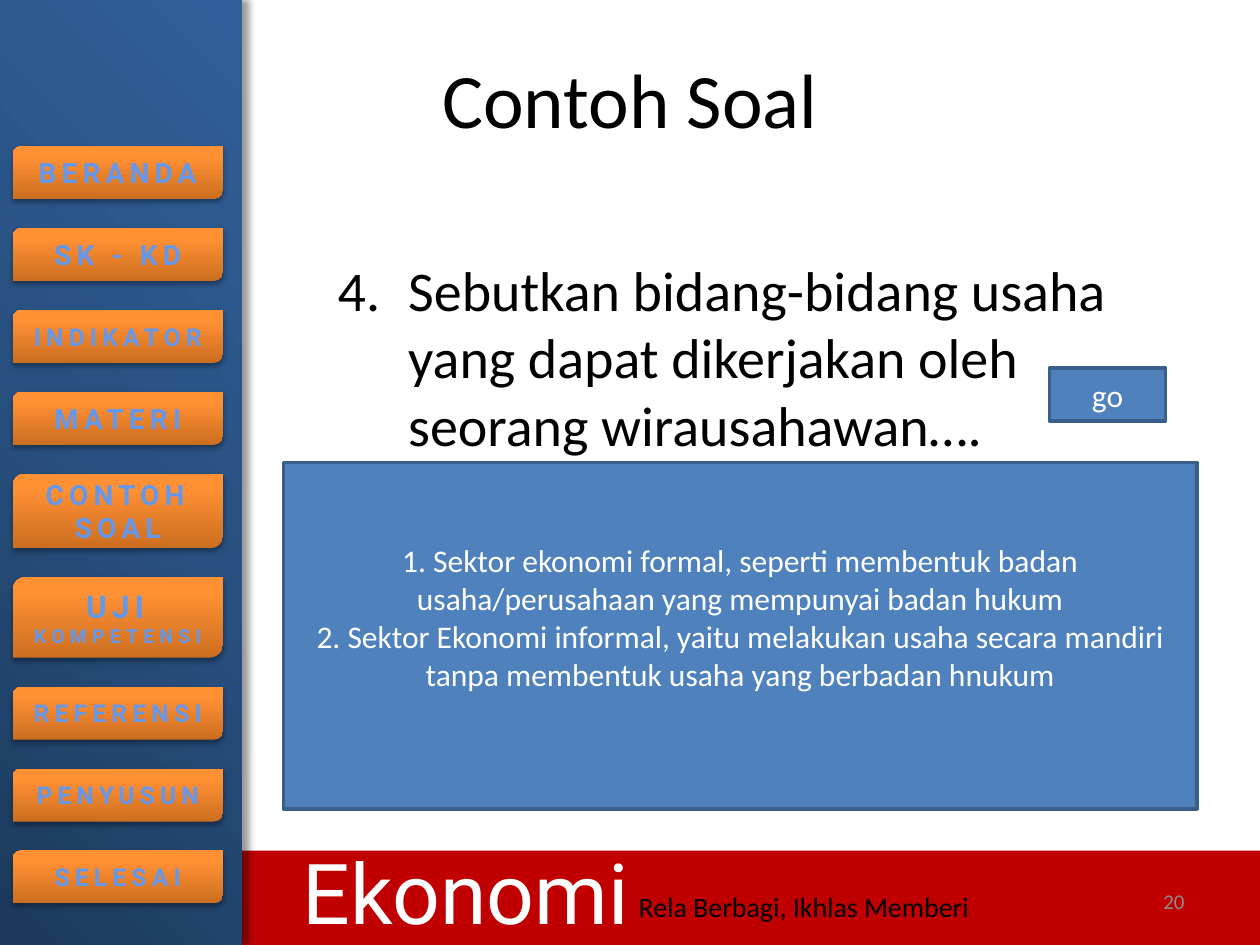
import pptx
import pptx.util
import pptx.dml.color
import pptx.enum.shapes
import pptx.enum.text
import pptx.oxml
import pptx.oxml.ns

Inches, Pt = pptx.util.Inches, pptx.util.Pt
SHAPE = pptx.enum.shapes.MSO_SHAPE
ALIGN = pptx.enum.text.PP_ALIGN
ANCHOR = pptx.enum.text.MSO_ANCHOR
qn = pptx.oxml.ns.qn

COLORS = {"white": "FFFFFF", "black": "000000", "gray": "8C8C8C", "red": "C00000",
          "blue": "4F81BD", "border": "3A5F8C"}
SIDEBAR_STOPS = [(0, "1C395B"), (50, "285181"), (100, "306099")]
BUTTON_STOPS = [(0, "CC6E20"), (80, "FF9034"), (100, "FF9136")]
LABEL_STOPS = [(10, "6398ED"), (75, "265EA0")]
CORNER = '<a:path path="circle"><a:fillToRect t="100000" r="100000"/></a:path>'
UPWARD = '<a:lin ang="16200000" scaled="0"/>'
DOWNWARD = '<a:lin ang="5400000" scaled="0"/>'

# Button height and its runs as (text, size)
BUTTONS = [
    (0.42, [("BERANDA", 16)]),
    (0.42, [("SK - KD", 16)]),
    (0.42, [("INDIKATOR", 14)]),
    (0.42, [("MATERI", 16)]),
    (0.59, [("CONTOH SOAL", 16)]),
    (0.64, [("UJI", 18), (" KOMPETENSI", 11)]),
    (0.42, [("REFERENSI", 14)]),
    (0.42, [("PENYUSUN", 14)]),
    (0.42, [("SELESAI", 14)]),
]
BUTTON_TOP, BUTTON_GAP = 1.16, 0.23

TITLE = "Contoh Soal"
QUESTION = ("4.\tSebutkan bidang-bidang usaha yang dapat dikerjakan oleh "
            "seorang wirausahawan….")
ANSWERS = [
    "1. Sektor ekonomi formal, seperti membentuk badan usaha/perusahaan yang "
    "mempunyai badan hukum",
    "2. Sektor Ekonomi informal, yaitu melakukan usaha secara mandiri tanpa "
    "membentuk usaha yang berbadan hnukum",
]


def rgb(name):
    return pptx.dml.color.RGBColor.from_string(COLORS[name])


def place(sp, left, top, width, height):
    sp.left, sp.top, sp.width, sp.height = map(Inches, (left, top, width, height))


def write(p, text, size=18, color="white", font="Calibri", bold=False, align=None):
    if align is not None:
        p.alignment = align
    r = p.add_run()
    r.text = text
    r.font.size, r.font.name, r.font.bold = Pt(size), font, bold
    r.font.color.rgb = rgb(color)
    return r


def add_gradient(fill, parent, stops, direction):
    """Replace the empty fill of a shape or run with a gradient."""
    fill.background()
    gs = "".join(f'<a:gs pos="{pos * 1000}"><a:srgbClr val="{c}"/></a:gs>'
                 for pos, c in stops)
    parent.replace(parent.find(qn("a:noFill")), pptx.oxml.parse_xml(
        f'<a:gradFill {pptx.oxml.ns.nsdecls("a")} rotWithShape="1">'
        f'<a:gsLst>{gs}</a:gsLst>{direction}</a:gradFill>'))


def add_shadow(sp, alpha, blur, dist, angle):
    sp._element.spPr.find(qn("a:effectLst")).append(pptx.oxml.parse_xml(
        f'<a:outerShdw {pptx.oxml.ns.nsdecls("a")} blurRad="{Pt(blur)}" '
        f'dist="{Pt(dist)}" dir="{angle * 60000}" rotWithShape="0">'
        f'<a:srgbClr val="000000"><a:alpha val="{alpha * 1000}"/></a:srgbClr>'
        '</a:outerShdw>'))


def add_box(s, at, fill=None, border=None, kind=SHAPE.RECTANGLE):
    sp = s.shapes.add_shape(kind, *map(Inches, at))
    sp.shadow.inherit = False
    if fill:
        sp.fill.solid()
        sp.fill.fore_color.rgb = rgb(fill)
    if border:
        sp.line.color.rgb = rgb(border)
        sp.line.width = Pt(2)
    else:
        sp.line.fill.background()
    sp.text_frame.word_wrap = True
    sp.text_frame.vertical_anchor = ANCHOR.MIDDLE
    return sp


def add_label(s, at, text, wrap=False, anchor=ANCHOR.TOP, **style):
    tf = s.shapes.add_textbox(*map(Inches, at)).text_frame
    tf.word_wrap = wrap
    tf.vertical_anchor = anchor
    write(tf.paragraphs[0], text, **style)


def add_button(s, top, height, runs):
    sp = add_box(s, (0.1, top, 1.67, height), kind=SHAPE.ROUND_2_DIAG_RECTANGLE)
    add_gradient(sp.fill, sp._element.spPr, BUTTON_STOPS, UPWARD)
    add_shadow(sp, 35, 3.1, 1.8, 90)
    for text, size in runs:
        r = write(sp.text_frame.paragraphs[0], text, size=size, font="Roboto",
                  bold=True, align=ALIGN.CENTER)
        rPr = r.font._element
        rPr.set("spc", "300")
        add_gradient(r.font.fill, rPr, LABEL_STOPS, DOWNWARD)


def add_frame(s):
    add_box(s, (0, 6.75, 10, 0.75), fill="red")
    add_label(s, (2.27, 6.62, 2.85, 0.91), "Ekonomi", size=48, font="Roboto",
              align=ALIGN.CENTER)
    sidebar = add_box(s, (0, 0, 1.92, 7.5))
    add_gradient(sidebar.fill, sidebar._element.spPr, SIDEBAR_STOPS, CORNER)
    add_shadow(sidebar, 40, 4, 3, 0)
    top = BUTTON_TOP
    for height, runs in BUTTONS:
        add_button(s, top, height, runs)
        top += height + BUTTON_GAP
    add_label(s, (4.97, 7.01, 3.09, 0.37), "Rela Berbagi, Ikhlas Memberi",
              size=16, color="black")
    add_label(s, (7.17, 6.95, 2.33, 0.4), "20", wrap=True, anchor=ANCHOR.MIDDLE,
              size=12, color="gray", align=ALIGN.RIGHT)


def add_question(s):
    title, body = s.shapes.title, s.placeholders[1]
    place(title, 0.5, 0.3, 9, 0.95)
    title.text_frame.vertical_anchor = ANCHOR.MIDDLE
    write(title.text_frame.paragraphs[0], TITLE, size=44, color="black",
          align=ALIGN.CENTER)

    place(body, 2.58, 1.33, 6.92, 5)
    body.text_frame.margin_top = Inches(0.7)
    p = body.text_frame.paragraphs[0]
    pPr = p._element.get_or_add_pPr()
    pPr.set("marL", str(Inches(0.56)))
    pPr.set("indent", str(-Inches(0.56)))
    pPr.append(pptx.oxml.parse_xml(f'<a:buNone {pptx.oxml.ns.nsdecls("a")}/>'))
    p.space_before = Pt(0)
    write(p, QUESTION, size=32, color="black")


def add_answers(s):
    go = add_box(s, (8.33, 2.92, 0.92, 0.42), fill="blue", border="border")
    write(go.text_frame.paragraphs[0], "go", align=ALIGN.CENTER)
    answer = add_box(s, (2.25, 3.67, 7.25, 2.75), fill="blue", border="border")
    tf = answer.text_frame
    tf.margin_bottom = Inches(0.35)
    for i, text in enumerate(ANSWERS):
        p = tf.add_paragraph() if i else tf.paragraphs[0]
        write(p, text, align=ALIGN.CENTER)


def main():
    prs = pptx.Presentation()
    prs.slide_width, prs.slide_height = Inches(10), Inches(7.5)
    s = prs.slides.add_slide(prs.slide_layouts[1])
    add_frame(s)
    add_question(s)
    add_answers(s)
    prs.save("out.pptx")


if __name__ == "__main__":
    main()
